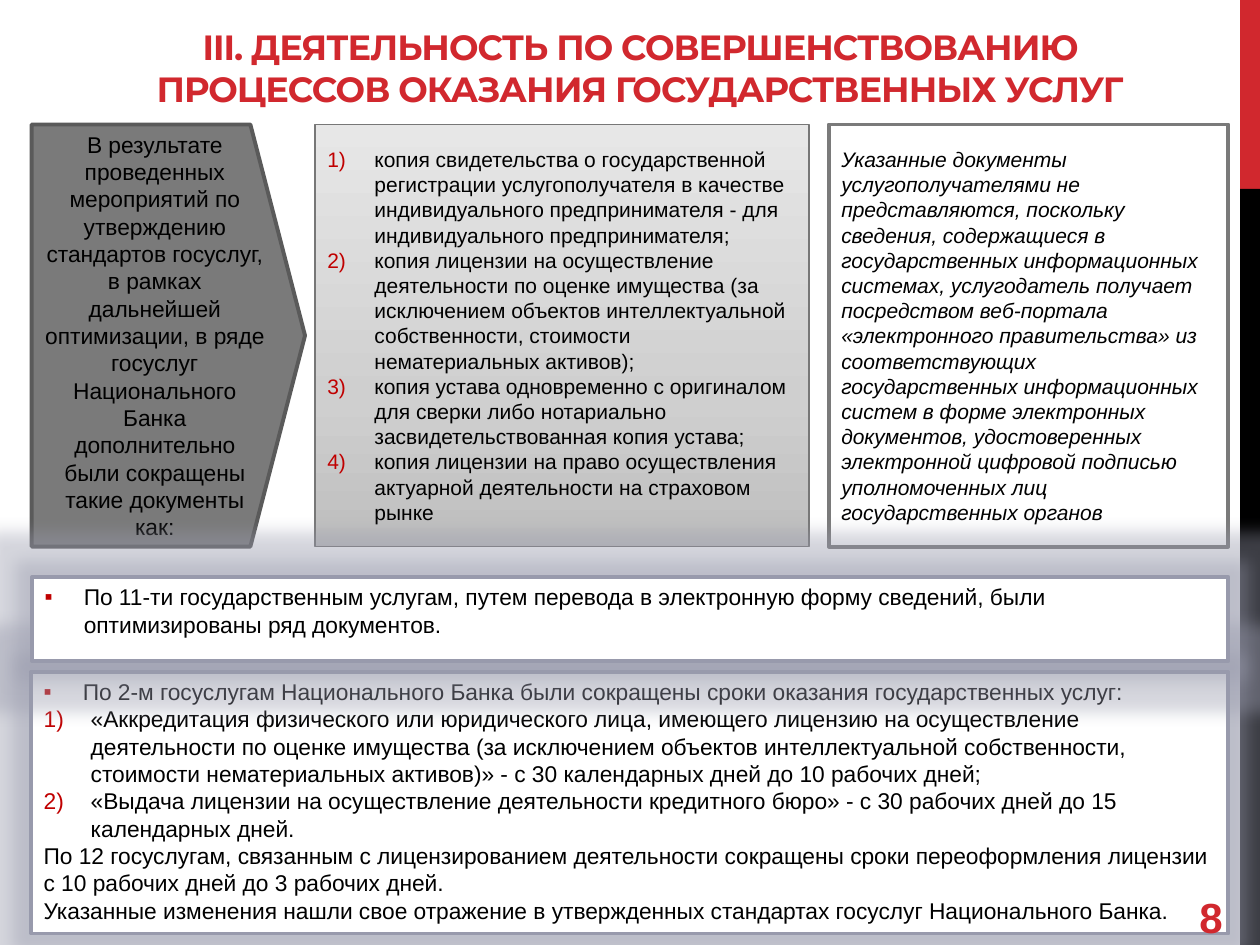
import lxml.etree
import pptx
import pptx.dml.color
import pptx.enum.shapes
import pptx.enum.text
import pptx.oxml.ns
import pptx.util
from pptx.util import Cm

COLORS = {
    "red": "D1282E", "marker": "C00000", "black": "000000", "white": "FFFFFF",
    "gray": "7A7A7A", "dark_gray": "5A5A5A", "mid_gray": "777777", "lavender": "989AAC",
}
GRADIENT = [(0, "BEBEBE"), (35, "CFCFCF"), (100, "E7E7E7")]
SHAPES = pptx.enum.shapes.MSO_SHAPE
ALIGN = pptx.enum.text.PP_ALIGN
ANCHOR = pptx.enum.text.MSO_ANCHOR

TITLE = "III. ДЕЯТЕЛЬНОСТЬ ПО СОВЕРШЕНСТВОВАНИЮ ПРОЦЕССОВ ОКАЗАНИЯ ГОСУДАРСТВЕННЫХ УСЛУГ"
INTRO = (
    "В результате проведенных мероприятий по утверждению стандартов госуслуг, в рамках "
    "дальнейшей оптимизации, в ряде госуслуг Национального Банка дополнительно были "
    "сокращены такие документы как:"
)
DOCUMENTS = [
    "копия свидетельства о государственной регистрации услугополучателя в качестве "
    "индивидуального предпринимателя - для индивидуального предпринимателя;",
    "копия лицензии на осуществление деятельности по оценке имущества (за исключением "
    "объектов интеллектуальной собственности, стоимости нематериальных активов);",
    "копия устава одновременно с оригиналом для сверки либо нотариально "
    "засвидетельствованная копия устава;",
    "копия лицензии на право осуществления актуарной деятельности на страховом рынке",
]
EXPLANATION = (
    "Указанные документы услугополучателями не представляются, поскольку сведения, "
    "содержащиеся в государственных информационных системах, услугодатель получает "
    "посредством веб-портала «электронного правительства» из соответствующих "
    "государственных информационных систем в форме электронных документов, удостоверенных "
    "электронной цифровой подписью уполномоченных лиц государственных органов"
)
ELECTRONIC = (
    "По 11-ти государственным услугам, путем перевода в электронную форму сведений, "
    "были оптимизированы ряд документов."
)
DEADLINES = [
    ("bullet", "По 2-м госуслугам Национального Банка были сокращены сроки оказания "
               "государственных услуг:"),
    ("number", "«Аккредитация физического или юридического лица, имеющего лицензию на "
               "осуществление деятельности по оценке имущества (за исключением объектов "
               "интеллектуальной собственности, стоимости нематериальных активов)» - с 30 "
               "календарных дней до 10 рабочих дней;"),
    ("number", "«Выдача лицензии на осуществление деятельности кредитного бюро» - с 30 "
               "рабочих дней до 15 календарных дней."),
    (None, "По 12 госуслугам, связанным с лицензированием деятельности сокращены сроки "
           "переоформления лицензии с 10 рабочих дней до 3 рабочих дней."),
    (None, "Указанные изменения нашли свое отражение в утвержденных стандартах госуслуг "
           "Национального Банка."),
]


def rgb(name):
    return pptx.dml.color.RGBColor.from_string(COLORS[name])


def add_element(parent, tag, **attributes):
    element = lxml.etree.SubElement(parent, pptx.oxml.ns.qn(tag))
    for name, value in attributes.items():
        element.set(name, str(value))
    return element


def add_box(slide, kind, box, fill, line=None, line_width=2.25):
    shape = slide.shapes.add_shape(kind, *map(Cm, box))
    shape.shadow.inherit = False
    shape.fill.solid()
    shape.fill.fore_color.rgb = rgb(fill)
    if line:
        shape.line.color.rgb = rgb(line)
        shape.line.width = pptx.util.Pt(line_width)
    else:
        shape.line.fill.background()
    return shape


def add_glow(shape):
    effects = shape._element.spPr.find(pptx.oxml.ns.qn("a:effectLst"))
    glow = add_element(effects, "a:glow", rad=pptx.util.Pt(18))
    color = add_element(glow, "a:srgbClr", val=COLORS["lavender"])
    add_element(color, "a:alpha", val=40000)


def set_gradient(shape):
    """Fill from the bottom up with the three gray stops."""
    shape.fill.gradient()
    shape.fill.gradient_angle = 90
    stops = shape._element.spPr.find(pptx.oxml.ns.qn("a:gradFill")).find(pptx.oxml.ns.qn("a:gsLst"))
    for stop in list(stops):
        stops.remove(stop)
    for position, color in GRADIENT:
        stop = add_element(stops, "a:gs", pos=position * 1000)
        add_element(stop, "a:srgbClr", val=color)


def set_marker(paragraph, marker):
    """Give the paragraph a square bullet or an automatic number."""
    properties = paragraph._p.get_or_add_pPr()
    indent = Cm(0.95 if marker == "number" else 0.79)
    properties.set("marL", str(indent))
    properties.set("indent", str(-indent))
    add_element(add_element(properties, "a:buClr"), "a:srgbClr", val=COLORS["marker"])
    if marker == "number":
        add_element(properties, "a:buFont", typeface="+mj-lt")
        add_element(properties, "a:buAutoNum", type="arabicParenR")
    else:
        add_element(properties, "a:buFont", typeface="Arial")
        add_element(properties, "a:buChar", char="▪")


def write(shape, items, size, anchor=ANCHOR.MIDDLE, align=ALIGN.LEFT, color="black",
          font="Arial", bold=False, italic=False):
    """Write (marker, text) items, one paragraph each."""
    frame = shape.text_frame
    frame.word_wrap = True
    frame.vertical_anchor = anchor
    for index, (marker, text) in enumerate(items):
        paragraph = frame.add_paragraph() if index else frame.paragraphs[0]
        paragraph.alignment = align
        if marker:
            set_marker(paragraph, marker)
        run = paragraph.add_run()
        run.text = text
        run.font.name = font
        run.font.size = pptx.util.Pt(size)
        run.font.bold = bold
        run.font.italic = italic
        run.font.color.rgb = rgb(color)


def add_label(slide, box, text, size, **style):
    label = slide.shapes.add_textbox(*map(Cm, box))
    write(label, [(None, text)], size, color="red", bold=True, **style)
    return label


def add_side_stripe(slide):
    add_box(slide, SHAPES.RECTANGLE, (25, 0, 0.4, 3.81), "red")
    add_box(slide, SHAPES.RECTANGLE, (25, 3.81, 0.4, 15.24), "black")


def add_top_row(slide):
    top, height = 2.51, 8.51
    intro = add_box(slide, SHAPES.PENTAGON, (0.64, top, 5.51, height), "gray", "dark_gray")
    intro.adjustments[0] = 0.2
    write(intro, [(None, INTRO)], 13, align=ALIGN.CENTER)

    documents = add_box(slide, SHAPES.RECTANGLE, (6.35, top, 9.96, height), "white", "mid_gray", 1)
    set_gradient(documents)
    write(documents, [("number", text) for text in DOCUMENTS], 12)

    explanation = add_box(slide, SHAPES.RECTANGLE, (16.71, top, 8.05, height), "white", "gray")
    write(explanation, [(None, EXPLANATION)], 12, italic=True)


def add_glowing_box(slide, box, items):
    shape = add_box(slide, SHAPES.RECTANGLE, box, "white", "lavender")
    add_glow(shape)
    write(shape, items, 13, anchor=ANCHOR.TOP)


def main():
    presentation = pptx.Presentation()
    presentation.slide_width, presentation.slide_height = Cm(25.4), Cm(19.05)
    slide = presentation.slides.add_slide(presentation.slide_layouts[6])

    add_side_stripe(slide)
    add_glowing_box(slide, (0.63, 13.54, 24.13, 5.28), DEADLINES)
    title = add_label(slide, (1.47, 0.43, 22.86, 1.9), TITLE, 20, font="Montserrat",
                      anchor=ANCHOR.BOTTOM, align=ALIGN.CENTER)
    title.text_frame.paragraphs[0].runs[0]._r.get_or_add_rPr().set("spc", "-60")
    page_number = add_label(slide, (23.93, 17.98, 0.84, 1.02), "8", 24)
    page_number.text_frame.word_wrap = False
    add_top_row(slide)
    add_glowing_box(slide, (0.65, 11.63, 24.11, 1.7), [("bullet", ELECTRONIC)])

    presentation.save("out.pptx")


if __name__ == "__main__":
    main()
